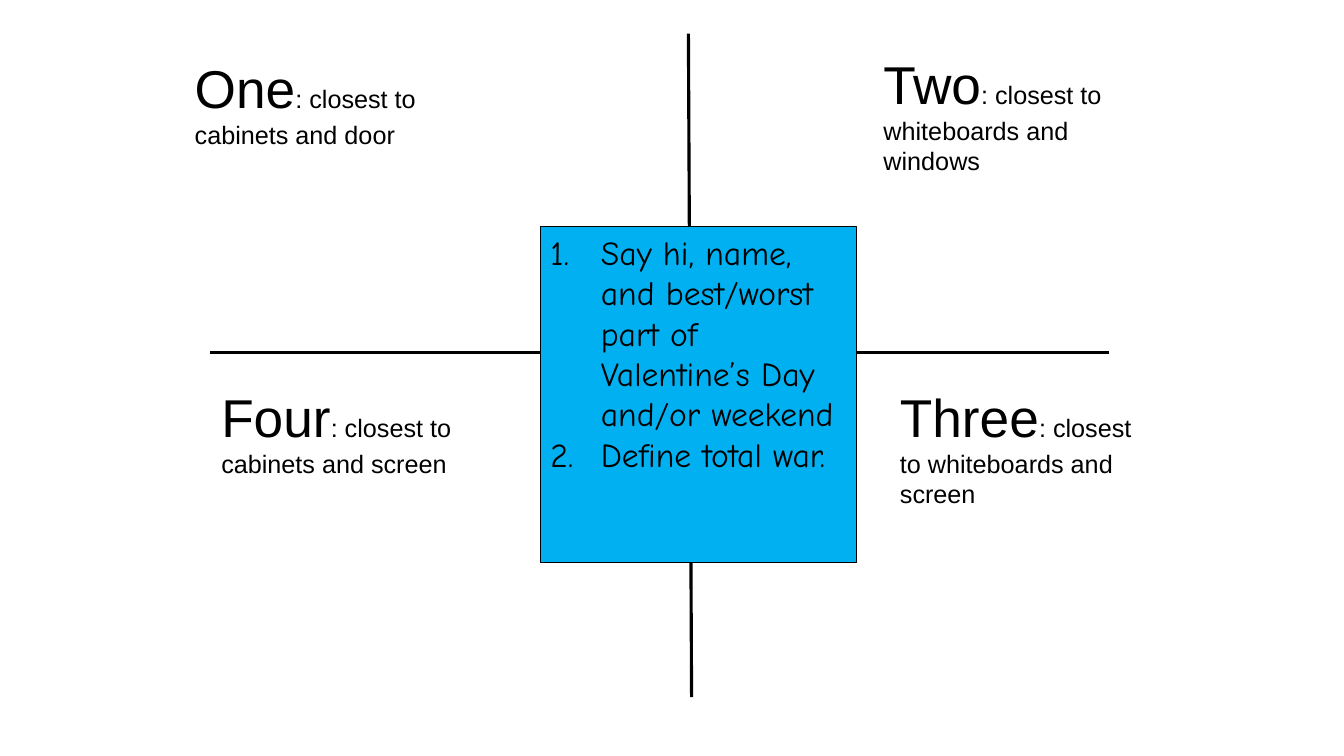
from dataclasses import dataclass

from lxml.etree import SubElement
from pptx import Presentation
from pptx.dml.color import RGBColor
from pptx.enum.shapes import MSO_CONNECTOR
from pptx.enum.text import MSO_ANCHOR, MSO_AUTO_SIZE
from pptx.oxml.ns import qn
from pptx.slide import Slide
from pptx.text.text import _Run as Run
from pptx.util import Pt

COLORS = {"ink": "000000", "task_box": "00B0F0"}


@dataclass
class Axis:
    x1: float
    y1: float
    x2: float
    y2: float
    weight: float


@dataclass
class Corner:
    name: str
    place: str
    left: float
    top: float
    height: float


AXES = [
    Axis(491.75, 24, 494, 498, 2.25),
    Axis(150, 252, 792, 252, 2),
]
CORNERS = [
    Corner("Three", ": closest to whiteboards and screen", 635.75, 270.75, 97),
    Corner("Two", ": closest to whiteboards and windows", 624, 33, 97),
    Corner("One", ": closest to cabinets and door", 132, 36, 75),
    Corner("Four", ": closest to cabinets and screen", 151, 270.75, 75),
]
TASKS = [
    "Say hi, name, and best/worst part of Valentine’s Day and/or weekend",
    "Define total war.",
]


def color(key: str) -> RGBColor:
    return RGBColor.from_string(COLORS[key])


def style_run(r: Run, font: str, size: float) -> None:
    r.font.name = font
    r.font.size = Pt(size)
    r.font.color.rgb = color("ink")


def draw_axis(s: Slide, axis: Axis) -> None:
    line = s.shapes.add_connector(
        MSO_CONNECTOR.STRAIGHT, Pt(axis.x1), Pt(axis.y1), Pt(axis.x2), Pt(axis.y2)
    )
    line.line.color.rgb = color("ink")
    line.line.width = Pt(axis.weight)
    SubElement(line._element.spPr, qn("a:effectLst"))


def draw_corner(s: Slide, corner: Corner) -> None:
    sp = s.shapes.add_textbox(Pt(corner.left), Pt(corner.top), Pt(180), Pt(corner.height))
    sp.text_frame.word_wrap = True
    p = sp.text_frame.paragraphs[0]
    for text, size in ((corner.name, 38), (corner.place, 18)):
        r = p.add_run()
        r.text = text
        style_run(r, "Arial", size)


def draw_tasks(s: Slide, tasks: list[str]) -> None:
    sp = s.placeholders[1]
    sp.left, sp.top, sp.width, sp.height = Pt(386), Pt(162), Pt(226), Pt(240)
    sp.fill.solid()
    sp.fill.fore_color.rgb = color("task_box")
    sp.line.color.rgb = color("ink")
    sp.line.width = Pt(0.75)
    tf = sp.text_frame
    tf.text = "\n".join(tasks)
    tf.word_wrap = True
    tf.auto_size = MSO_AUTO_SIZE.NONE
    tf.vertical_anchor = MSO_ANCHOR.TOP
    for p in tf.paragraphs:
        p.space_before = Pt(0)
        pPr = p._p.get_or_add_pPr()
        pPr.set("marL", str(Pt(36)))
        pPr.set("indent", str(-Pt(36)))
        SubElement(pPr, qn("a:buFont"), typeface="+mj-lt")
        SubElement(pPr, qn("a:buAutoNum"), type="arabicPeriod")
        style_run(p.runs[0], "Comic Neue", 24)
    s.shapes._spTree.append(sp._element)


def main() -> None:
    """Build the four-corners discussion slide."""
    prs = Presentation()
    prs.slide_width, prs.slide_height = Pt(960), Pt(540)
    s = prs.slides.add_slide(prs.slide_layouts[1])
    title = s.shapes.title._element
    title.getparent().remove(title)
    for axis in AXES:
        draw_axis(s, axis)
    for corner in CORNERS:
        draw_corner(s, corner)
    draw_tasks(s, TASKS)
    prs.save("out.pptx")


if __name__ == "__main__":
    main()
